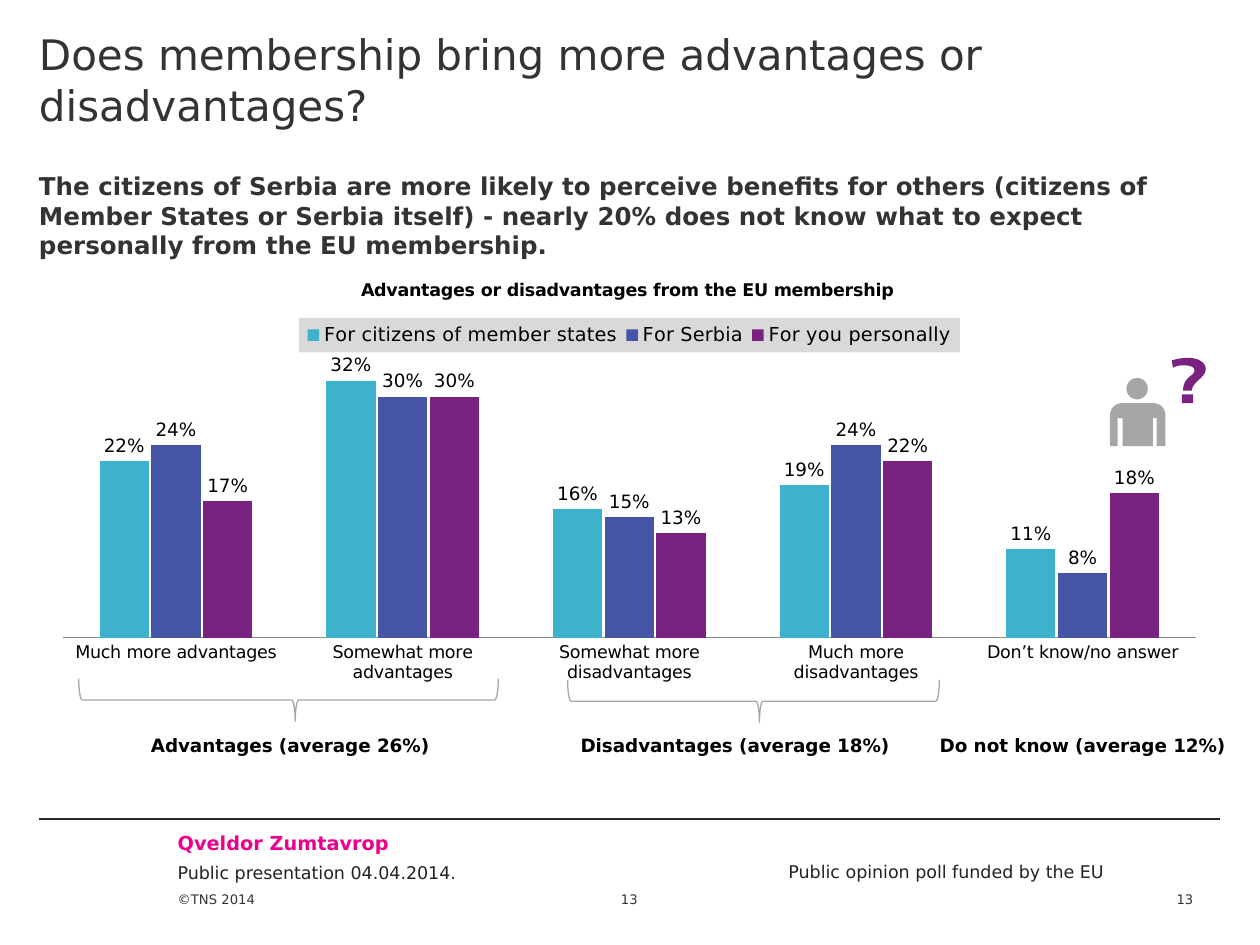
from lxml import etree
from pptx import Presentation
from pptx.chart.data import CategoryChartData
from pptx.dml.color import RGBColor
from pptx.enum import chart as charts, shapes, text
from pptx.oxml import parse_xml
from pptx.oxml.ns import nsdecls, qn
from pptx.util import Inches, Pt

FONT = "DejaVu Sans"
GREY, DARK, PURPLE = "A6A6A6", "333333", "7A2280"
PERCENT = r"0\%"

CATEGORIES = ["Much more advantages", "Somewhat more advantages",
              "Somewhat more disadvantages", "Much more disadvantages",
              "Don’t know/no answer"]
SERIES = [("For citizens of member states", (22, 32, 16, 19, 11), "3EB1CC"),
          ("For Serbia", (24, 30, 15, 24, 8), "4655A5"),
          ("For you personally", (17, 30, 13, 22, 18), PURPLE)]

# Outlines in inches: pairs are corners, sixes are Bézier curves
PERSON = [[(8.91, 3.2), (8.85, 3.2, 8.81, 3.24, 8.81, 3.3), (8.81, 3.54),
           (8.87, 3.54), (8.87, 3.32), (8.91, 3.32), (8.91, 3.54),
           (9.15, 3.54), (9.15, 3.32), (9.18, 3.32), (9.18, 3.54),
           (9.25, 3.54), (9.25, 3.3), (9.25, 3.24, 9.21, 3.2, 9.15, 3.2)]]
QUESTION_MARK = [
    [(9.3, 2.86), (9.34, 2.85, 9.38, 2.84, 9.43, 2.84),
     (9.5, 2.84, 9.57, 2.87, 9.57, 2.93), (9.57, 3, 9.46, 3.03, 9.46, 3.1),
     (9.39, 3.1), (9.39, 3.05, 9.41, 3.02, 9.43, 3),
     (9.45, 2.98, 9.48, 2.97, 9.48, 2.94), (9.48, 2.91, 9.44, 2.9, 9.4, 2.9),
     (9.37, 2.9, 9.34, 2.9, 9.31, 2.92)],
    [(9.38, 3.13), (9.47, 3.13), (9.47, 3.2), (9.38, 3.2)]]


def color(value):
    return RGBColor.from_string(value)


def set_font(font, size, value="000000", bold=False):
    font.name, font.size, font.bold = FONT, Pt(size), bold
    font.color.rgb = color(value)


def add_text(slide, words, box, size, value="000000", bold=False, align="LEFT",
             anchor="TOP", insets=(0, 0, 0, 0), wrap=True):
    shape = slide.shapes.add_textbox(*map(Inches, box))
    frame = shape.text_frame
    frame.word_wrap = wrap
    frame.vertical_anchor = getattr(text.MSO_ANCHOR, anchor)
    (frame.margin_left, frame.margin_top,
     frame.margin_right, frame.margin_bottom) = map(Inches, insets)
    paragraph = frame.paragraphs[0]
    paragraph.text = words
    paragraph.alignment = getattr(text.PP_ALIGN, align)
    set_font(paragraph.font, size, value, bold)


def add_rule(slide, left, right, y):
    line = slide.shapes.add_connector(shapes.MSO_CONNECTOR.STRAIGHT,
                                      *map(Inches, (left, y, right, y)))
    line.line.color.rgb = color("262626")
    line.line.width = Pt(0.75)
    etree.SubElement(line._element.spPr, qn("a:effectLst"))


def paint(shape, value):
    shape.shadow.inherit = False
    shape.fill.solid()
    shape.fill.fore_color.rgb = color(value)
    shape.line.fill.background()


def flatten(contour, steps=8):
    points = [contour[0]]
    for part in contour[1:]:
        if len(part) == 2:
            points.append(part)
            continue
        corners = [points[-1], part[:2], part[2:4], part[4:]]
        for step in range(1, steps + 1):
            t = step / steps
            weights = ((1 - t) ** 3, 3 * t * (1 - t) ** 2, 3 * t * t * (1 - t), t ** 3)
            points.append(tuple(sum(w * corner[axis] for w, corner in zip(weights, corners))
                                for axis in (0, 1)))
    return [(Inches(x), Inches(y)) for x, y in points]


def add_outline(slide, contours, value):
    first, *others = [flatten(contour) for contour in contours]
    builder = slide.shapes.build_freeform(*first[0])
    builder.add_line_segments(first[1:], close=True)
    for points in others:
        builder.move_to(*points[0])
        builder.add_line_segments(points[1:], close=True)
    paint(builder.convert_to_shape(), value)


def add_brace(slide, box):
    brace = slide.shapes.add_shape(shapes.MSO_SHAPE.LEFT_BRACE, *map(Inches, box))
    brace.rotation = 270
    brace.adjustments[0], brace.adjustments[1] = 0.083, 0.516
    brace.shadow.inherit = False
    brace.fill.background()
    brace.line.color.rgb = color(GREY)
    brace.line.width = Pt(0.75)


def set_layout(parent, index, inner=False, **places):
    """Place a chart part by fractions of the chart area."""
    for old in parent.findall(qn("c:layout")):
        parent.remove(old)
    target = '<c:layoutTarget val="inner"/>' if inner else ""
    modes = "".join(f'<c:{key}Mode val="edge"/>' for key in "xy")
    values = "".join(f'<c:{key} val="{value}"/>' for key, value in places.items())
    parent.insert(index, parse_xml(
        f'<c:layout {nsdecls("c")}><c:manualLayout>{target}{modes}{values}'
        '</c:manualLayout></c:layout>'))


def add_column_chart(slide, box):
    data = CategoryChartData(number_format=PERCENT)
    data.categories = CATEGORIES
    for name, values, _ in SERIES:
        data.add_series(name, values)
    chart = slide.shapes.add_chart(charts.XL_CHART_TYPE.COLUMN_CLUSTERED,
                                   *map(Inches, box), data).chart
    set_font(chart.font, 11)

    # Columns and their labels
    plot = chart.plots[0]
    plot.gap_width, plot.overlap, plot.vary_by_categories = 150, -5, False
    for series, (_, _, value) in zip(plot.series, SERIES):
        series.format.fill.solid()
        series.format.fill.fore_color.rgb = color(value)
        labels = series.data_labels
        labels.show_value = True
        labels.number_format, labels.number_format_is_linked = PERCENT, False
        labels.position = charts.XL_LABEL_POSITION.OUTSIDE_END
        set_font(labels.font, 10.5)
    set_layout(chart._chartSpace.chart.plotArea, 0, inner=True,
               x=0.02, y=0.22, w=0.96, h=0.655)

    # Axes
    axis = chart.category_axis
    axis.major_tick_mark = charts.XL_TICK_MARK.NONE
    axis.format.line.color.rgb = color("868686")
    set_font(axis.tick_labels.font, 10)
    values = chart.value_axis
    values.minimum_scale, values.maximum_scale = 0, 35
    values.has_major_gridlines = values.visible = False

    # Title and legend
    chart.has_title = True
    title = chart.chart_title
    title.text_frame.text = "Advantages or disadvantages from the EU membership"
    set_font(title.text_frame.paragraphs[0].font, 10, bold=True)
    set_layout(title._element, 1, x=0.27, y=0.03)
    chart.has_legend = True
    legend = chart.legend
    legend.position = charts.XL_LEGEND_POSITION.TOP
    legend.include_in_layout = False
    set_font(legend.font, 11)
    set_layout(legend._element, 1, x=0.22, y=0.13, w=0.56, h=0.08)
    legend._element.find(qn("c:overlay")).addnext(parse_xml(
        f'<c:spPr {nsdecls("c", "a")}><a:solidFill><a:srgbClr val="D9D9D9"/>'
        '</a:solidFill></c:spPr>'))


def main():
    presentation = Presentation()
    presentation.slide_width, presentation.slide_height = Inches(10), Inches(7.5)
    slide = presentation.slides.add_slide(presentation.slide_layouts[6])

    # Footer
    add_text(slide, "©TNS 2014", (1.41, 6.83, 0.83, 0.58), 7.5, DARK,
             anchor="BOTTOM", insets=(0, 0, 0, 0.29))
    add_rule(slide, 0.31, 9.68, 6.5)
    add_text(slide, "Qveldor Zumtavrop", (1.41, 6.6, 3.31, 0.19), 11, "EC008C", bold=True)
    add_text(slide, "Public presentation 04.04.2014.", (1.41, 6.84, 3.4, 0.17), 10, "232323")
    add_text(slide, "Public opinion poll funded by the EU", (5.36, 6.83, 3.4, 0.17), 10,
             "232323", align="RIGHT")
    for left in (4.72, 9.13):
        add_text(slide, "13", (left, 6.92, 0.55, 0.28), 7.5, DARK,
                 align="CENTER", anchor="BOTTOM")

    # Headings
    add_text(slide, "Does membership bring more advantages or disadvantages?",
             (0.31, 0, 9.37, 1.13), 24, DARK, insets=(0, 0.23, 0, 0))
    add_text(slide, "The citizens of Serbia are more likely to perceive benefits for others "
             "(citizens of Member States or Serbia itself) - nearly 20% does not know what "
             "to expect personally from the EU membership.",
             (0.31, 1.13, 9.37, 0.83), 14, DARK, bold=True, insets=(0, 0.23, 0, 0))

    add_column_chart(slide, (0.31, 2.08, 9.37, 3.41))

    # Puzzled person
    add_outline(slide, PERSON, GREY)
    head = slide.shapes.add_shape(shapes.MSO_SHAPE.OVAL,
                                  *map(Inches, (8.94, 3, 0.17, 0.17)))
    paint(head, GREY)
    add_outline(slide, QUESTION_MARK, PURPLE)

    # Group averages
    add_brace(slide, (2.12, 3.89, 0.34, 3.33))
    add_brace(slide, (5.81, 4.09, 0.34, 2.95))
    for words, left, width in (("Advantages (average 26%)", 1.1, 2.5),
                               ("Disadvantages (average 18%)", 4.51, 2.75),
                               ("Do not know (average 12%)", 7.36, 2.58)):
        add_text(slide, words, (left, 5.78, width, 0.28), 10.5, bold=True,
                 insets=(0.1, 0.05, 0.1, 0.05), wrap=False)

    presentation.save("out.pptx")


if __name__ == "__main__":
    main()
